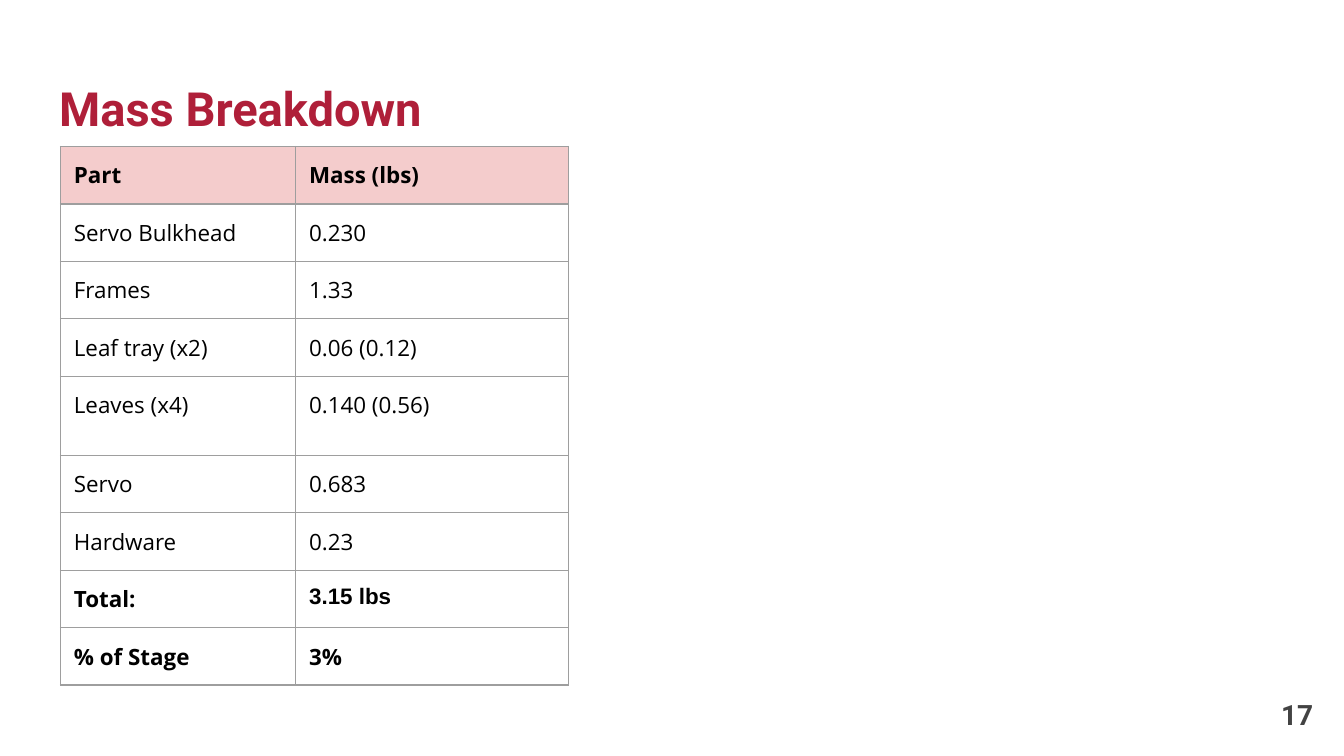
import pptx
import pptx.dml.color
import pptx.enum.text
import pptx.oxml
import pptx.oxml.ns
import pptx.util

WIDTH = 10
HEIGHT = WIDTH * 9 / 16
COLORS = {
    "title": "AF1F39",
    "number": "434343",
    "text": "000000",
    "header": "F4CCCC",
    "border": "9E9E9E",
    "background": "FFFFFF",
}
TITLE_FORMAT = {"name": "Roboto", "size": pptx.util.Pt(25.2), "bold": True}
NUMBER_FORMAT = {"name": "Roboto", "size": pptx.util.Pt(15), "bold": True}
CELL_FORMAT = {"name": "Open Sans", "size": pptx.util.Pt(12), "bold": False}
STRONG_FORMAT = {**CELL_FORMAT, "bold": True}
TOTAL_FORMAT = {**STRONG_FORMAT, "name": "Arial"}
MARGINS = {
    f"margin_{side}": pptx.util.Inches(0.1) for side in ("left", "right", "top", "bottom")
}
FRAME_FORMAT = {
    "word_wrap": True,
    "auto_size": pptx.enum.text.MSO_AUTO_SIZE.NONE,
    **MARGINS,
}

COLUMN_WIDTHS = [1.75, 2.03]
ROW_HEIGHT = 0.39
TALL_ROW_HEIGHT = 0.59
TALL_PART = "Leaves (x4)"
MASSES = [
    ("Part", "Mass (lbs)"),
    ("Servo Bulkhead", "0.230"),
    ("Frames", "1.33"),
    ("Leaf tray (x2)", "0.06 (0.12)"),
    (TALL_PART, "0.140 (0.56)"),
    ("Servo", "0.683"),
    ("Hardware", "0.23"),
    ("Total:", "3.15 lbs"),
    ("% of Stage", "3%"),
]
STRONG_PARTS = {"Part", "Total:", "% of Stage"}


def apply_format(target, values):
    for name, value in values.items():
        setattr(target, name, value)


def color(name):
    return pptx.dml.color.RGBColor.from_string(COLORS[name])


def write_text(frame, text, font_format, color_name, alignment):
    paragraph = frame.paragraphs[0]
    paragraph.alignment = alignment
    run = paragraph.add_run()
    run.text = text
    apply_format(run.font, font_format)
    run.font.color.rgb = color(color_name)


def format_box(shape, place, anchor):
    names = ("left", "top", "width", "height")
    apply_format(shape, dict(zip(names, map(pptx.util.Inches, place))))
    apply_format(shape.text_frame, {**FRAME_FORMAT, "vertical_anchor": anchor})


def add_title(slide, text):
    shape = slide.shapes.title
    format_box(shape, (0.34, 0.49, 9.32, 0.63), pptx.enum.text.MSO_ANCHOR.TOP)
    write_text(shape.text_frame, text, TITLE_FORMAT, "title", pptx.enum.text.PP_ALIGN.LEFT)


def add_page_number(slide, text):
    shape = slide.shapes.add_textbox(0, 0, 0, 0)
    format_box(shape, (9.27, 5.1, 0.6, 0.43), pptx.enum.text.MSO_ANCHOR.MIDDLE)
    write_text(shape.text_frame, text, NUMBER_FORMAT, "number", pptx.enum.text.PP_ALIGN.RIGHT)


def add_borders(cell):
    properties = cell._tc.get_or_add_tcPr()
    for side in ("L", "R", "T", "B"):
        properties.append(pptx.oxml.parse_xml(
            f'<a:ln{side} {pptx.oxml.ns.nsdecls("a")} w="{pptx.util.Pt(0.75)}">'
            f'<a:solidFill><a:srgbClr val="{COLORS["border"]}"/></a:solidFill></a:ln{side}>'
        ))


def format_cell(cell, text, font_format, is_header):
    apply_format(cell, MARGINS)
    add_borders(cell)
    if is_header:
        cell.fill.solid()
        cell.fill.fore_color.rgb = color("header")
    else:
        cell.fill.background()
    write_text(cell.text_frame, text, font_format, "text", pptx.enum.text.PP_ALIGN.LEFT)


def add_mass_table(slide):
    heights = [TALL_ROW_HEIGHT if part == TALL_PART else ROW_HEIGHT for part, mass in MASSES]
    place = (0.45, 1.09, sum(COLUMN_WIDTHS), sum(heights))
    table = slide.shapes.add_table(
        len(MASSES), len(COLUMN_WIDTHS), *map(pptx.util.Inches, place)
    ).table
    apply_format(table, {"first_row": False, "horz_banding": False})
    for column, width in zip(table.columns, COLUMN_WIDTHS):
        column.width = pptx.util.Inches(width)
    for index, (row, height, texts) in enumerate(zip(table.rows, heights, MASSES)):
        row.height = pptx.util.Inches(height)
        part_format = STRONG_FORMAT if texts[0] in STRONG_PARTS else CELL_FORMAT
        mass_format = TOTAL_FORMAT if texts[0] == "Total:" else part_format
        for cell, text, font_format in zip(row.cells, texts, (part_format, mass_format)):
            format_cell(cell, text, font_format, index == 0)


def main():
    presentation = pptx.Presentation()
    presentation.slide_width = pptx.util.Inches(WIDTH)
    presentation.slide_height = pptx.util.Inches(HEIGHT)
    slide = presentation.slides.add_slide(presentation.slide_layouts.get_by_name("Title Only"))
    slide.background.fill.solid()
    slide.background.fill.fore_color.rgb = color("background")
    add_title(slide, "Mass Breakdown")
    add_page_number(slide, "17")
    add_mass_table(slide)
    presentation.save("out.pptx")


if __name__ == "__main__":
    main()
